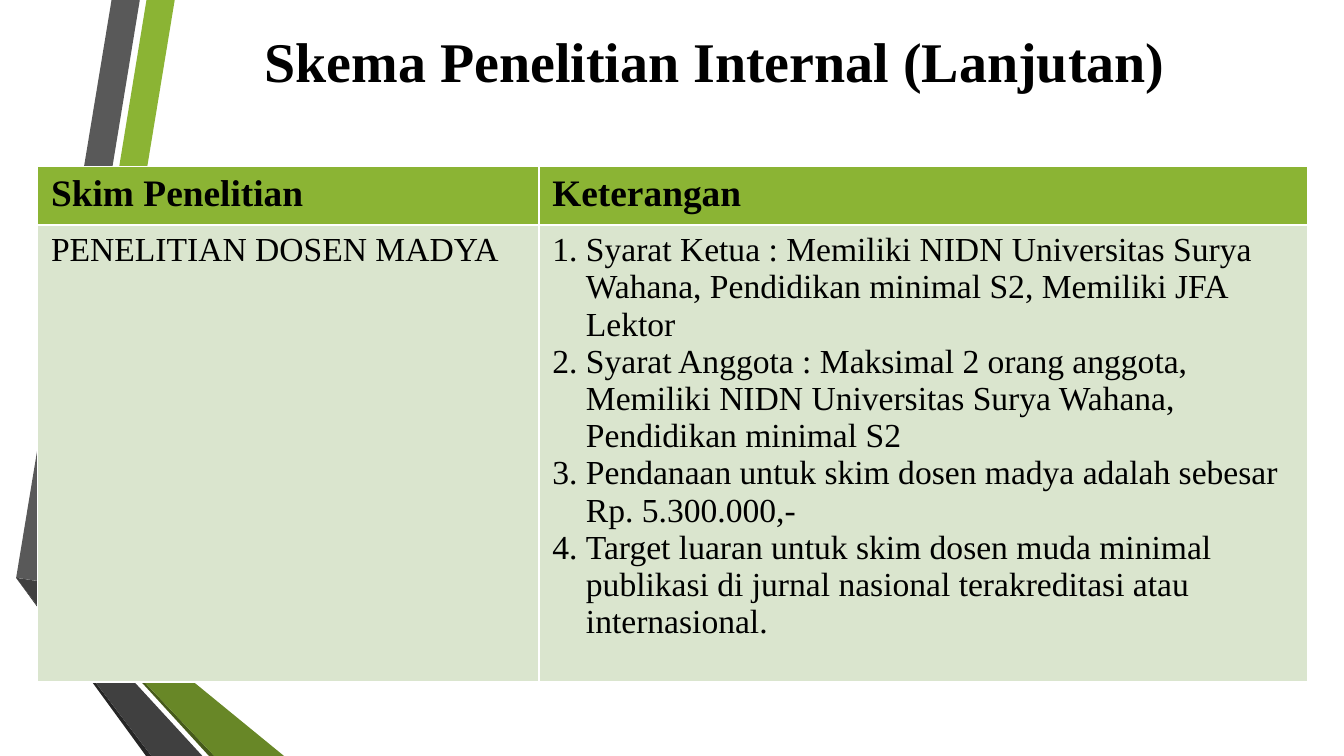
from dataclasses import dataclass

from lxml.etree import SubElement
from pptx import Presentation
from pptx.dml.color import RGBColor as Color
from pptx.enum.text import MSO_ANCHOR as Anchor, PP_ALIGN as Align
from pptx.oxml.ns import qn
from pptx.util import Inches, Pt


@dataclass(frozen=True)
class Theme:
    """Hold the colours, font and type sizes of the slide."""

    font: str = "Times New Roman"
    title_size: int = 30
    header_size: int = 20
    body_size: int = 18
    text: str = "000000"
    green: str = "8BB434"
    dark_green: str = "688727"
    deep_green: str = "465A1A"
    grey: str = "595959"
    dark_grey: str = "404040"
    deep_grey: str = "262626"
    pale_green: str = "DAE5CE"


THEME = Theme()

RIBBONS = [
    (THEME.green, [(0.38, 4.34), (0.58, 4.37), (1.3, 0), (1.09, 0)]),
    (THEME.grey, [(1.04, 0), (0.83, 0), (0.12, 4.3), (0.33, 4.33)]),
    (THEME.deep_grey, [(0.12, 4.3), (1.09, 5.63), (1.13, 5.63)]),
    (THEME.deep_green, [(0.38, 4.34), (1.56, 5.63), (1.6, 5.63)]),
    (THEME.dark_green, [(0.38, 4.34), (1.6, 5.63), (2.12, 5.63), (0.58, 4.37)]),
    (THEME.dark_grey, [(1.51, 5.63), (0.36, 4.38), (0.32, 4.33), (0.12, 4.3), (1.13, 5.63)]),
]

TITLE = "Skema Penelitian Internal (Lanjutan)"
HEADINGS = ["Skim Penelitian", "Keterangan"]
SCHEME = "PENELITIAN DOSEN MADYA"
DETAILS = [
    "Syarat Ketua : Memiliki NIDN Universitas Surya Wahana, Pendidikan minimal S2, Memiliki JFA Lektor",
    "Syarat Anggota : Maksimal 2 orang anggota, Memiliki NIDN Universitas Surya Wahana, Pendidikan minimal S2",
    "Pendanaan untuk skim dosen madya adalah sebesar Rp. 5.300.000,-",
    "Target luaran untuk skim dosen muda minimal publikasi di jurnal nasional terakreditasi atau internasional.",
]


def add_ribbon(page, colour, points):
    """Draw one closed, filled ribbon piece."""
    corners = [(Inches(x), Inches(y)) for x, y in points]
    builder = page.shapes.build_freeform(*corners[0])
    builder.add_line_segments(corners[1:], close=True)
    ribbon = builder.convert_to_shape()
    ribbon.shadow.inherit = False
    ribbon.fill.solid()
    ribbon.fill.fore_color.rgb = Color.from_string(colour)
    ribbon.line.fill.background()


def style_paragraph(para, text, size, bold=False):
    """Fill a paragraph and set its font."""
    para.text = text
    para.font.name = THEME.font
    para.font.size = Pt(size)
    para.font.bold = bold
    para.font.color.rgb = Color.from_string(THEME.text)


def number_paragraph(para):
    """Give a paragraph an automatic number and a hanging indent."""
    properties = para._p.get_or_add_pPr()
    properties.set("marL", str(Inches(0.25)))
    properties.set("indent", str(-Inches(0.25)))
    SubElement(properties, qn("a:buFont"), typeface="+mj-lt")
    SubElement(properties, qn("a:buAutoNum"), type="arabicPeriod")


def add_title(page):
    """Place the centred title."""
    box = page.shapes.add_textbox(Inches(1.21), Inches(0.13), Inches(8.22), Inches(0.63))
    frame = box.text_frame
    frame.word_wrap = True
    frame.vertical_anchor = Anchor.MIDDLE
    para = frame.paragraphs[0]
    style_paragraph(para, TITLE, THEME.title_size, bold=True)
    para.alignment = Align.CENTER


def fill_cell(cell, colour):
    """Set the fill of a cell."""
    cell.fill.solid()
    cell.fill.fore_color.rgb = Color.from_string(colour)


def add_scheme_table(page):
    """Build the table of the research scheme and its details."""
    frame = page.shapes.add_table(2, 2, Inches(0.28), Inches(1.24), Inches(9.45), Inches(3.53))
    table = frame.table
    for column, width in zip(table.columns, (3.73, 5.72)):
        column.width = Inches(width)
    for row, height in zip(table.rows, (0.39, 3.14)):
        row.height = Inches(height)
    for index, heading in enumerate(HEADINGS):
        header = table.cell(0, index)
        fill_cell(header, THEME.green)
        fill_cell(table.cell(1, index), THEME.pale_green)
        style_paragraph(header.text_frame.paragraphs[0], heading, THEME.header_size, bold=True)
    style_paragraph(table.cell(1, 0).text_frame.paragraphs[0], SCHEME, THEME.body_size)
    details = table.cell(1, 1).text_frame
    for index, text in enumerate(DETAILS):
        para = details.add_paragraph() if index else details.paragraphs[0]
        style_paragraph(para, text, THEME.body_size)
        number_paragraph(para)


def main():
    """Build the slide and save the deck."""
    deck = Presentation()
    deck.slide_width = Inches(10)
    deck.slide_height = deck.slide_width * 9 // 16
    page = deck.slides.add_slide(deck.slide_layouts[6])
    for colour, points in RIBBONS:
        add_ribbon(page, colour, points)
    add_title(page)
    add_scheme_table(page)
    deck.save("out.pptx")


if __name__ == "__main__":
    main()
